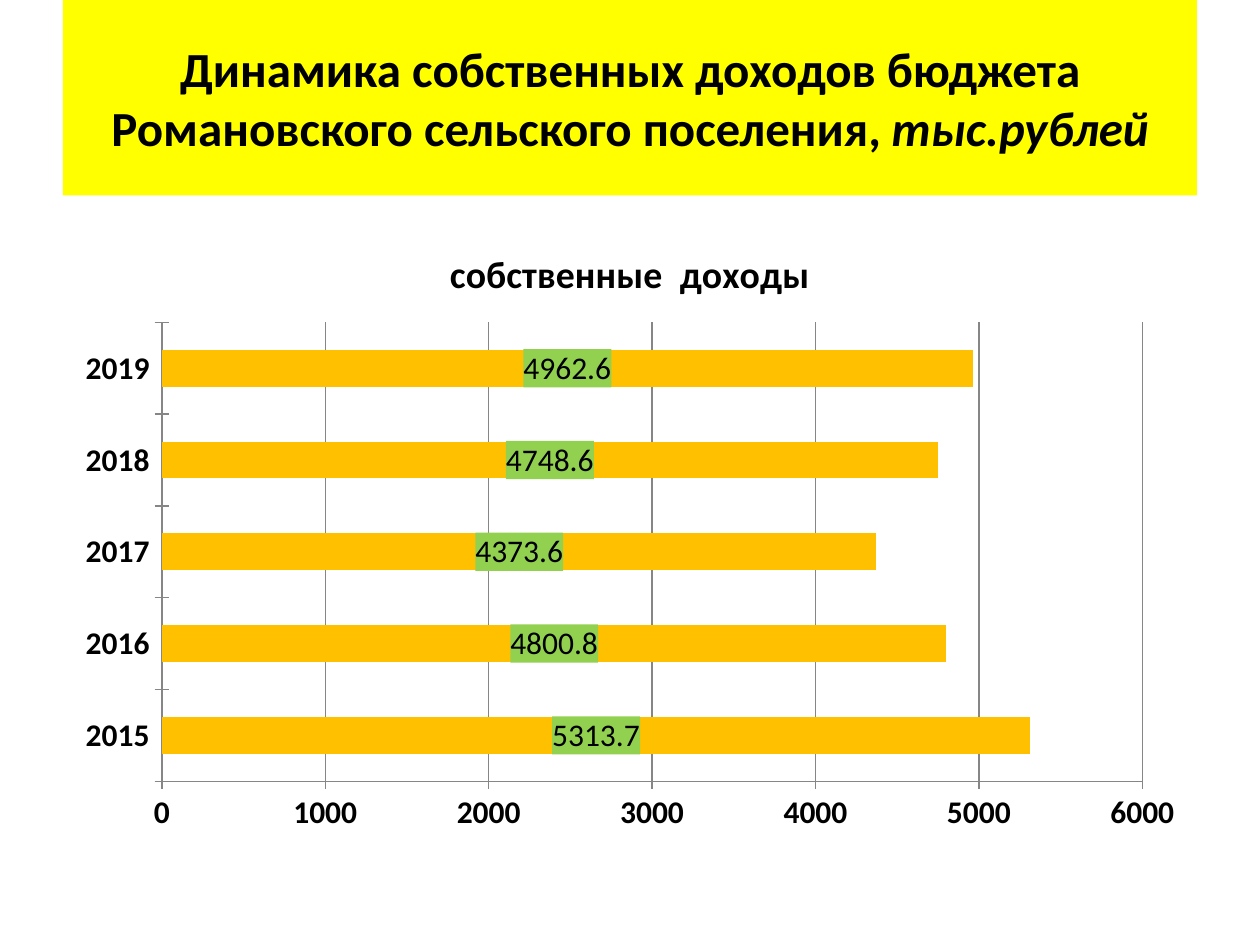
from pptx import Presentation
from pptx.chart.data import CategoryChartData as Data
from pptx.dml.color import RGBColor as Rgb
from pptx.enum.chart import XL_CHART_TYPE as Kind, XL_LABEL_POSITION as Pos
from pptx.enum.chart import XL_TICK_MARK as Tick
from pptx.enum.shapes import MSO_SHAPE as Shape
from pptx.enum.text import MSO_ANCHOR as Anchor, PP_ALIGN as Align
from pptx.oxml import parse_xml
from pptx.oxml.ns import nsdecls
from pptx.util import Cm, Pt

FACE = "Calibri"
HEAD = ("Динамика собственных доходов бюджета Романовского сельского поселения, ", "тыс.рублей")
NAME = "собственные  доходы"
YEARS = ["2015", "2016", "2017", "2018", "2019"]
SUMS = [5313.7, 4800.8, 4373.6, 4748.6, 4962.6]


def paint(part, hue):
    """Give a fill or line format a solid colour."""
    part.solid()
    part.fore_color.rgb = Rgb.from_string(hue)


def style(font, size, bold=True, slant=False):
    """Set the face, size, weight and colour of a font."""
    font.name, font.size = FACE, Pt(size)
    font.bold, font.italic = bold, slant
    font.color.rgb = Rgb.from_string("000000")


def add_head(slide):
    """Add the yellow heading band."""
    band = slide.shapes.add_shape(Shape.RECTANGLE, Cm(1.27), 0, Cm(22.86), Cm(3.94))
    band.shadow.inherit = False
    paint(band.fill, "FFFF00")
    band.line.fill.background()
    frame = band.text_frame
    frame.word_wrap = True
    frame.vertical_anchor = Anchor.MIDDLE
    para = frame.paragraphs[0]
    para.alignment = Align.CENTER
    for text, slant in zip(HEAD, (False, True)):
        run = para.add_run()
        run.text = text
        style(run.font, 28, slant=slant)


def set_axis(axis, grid):
    """Format one axis with crossing ticks and grey lines."""
    axis.major_tick_mark = Tick.CROSS if grid else Tick.OUTSIDE
    axis.minor_tick_mark = Tick.NONE
    axis.has_major_gridlines = grid
    style(axis.tick_labels.font, 18)
    lines = [axis.format.line]
    if grid:
        lines.append(axis.major_gridlines.format.line)
    for line in lines:
        paint(line.fill, "868686")
        line.width = Pt(0.75)


def set_labels(plot):
    """Show values on green boxes in the middle of the bars."""
    plot.has_data_labels = True
    labels = plot.data_labels
    labels.show_value = True
    labels.position = Pos.CENTER
    labels.number_format, labels.number_format_is_linked = "General", False
    style(labels.font, 18, bold=False)
    box = parse_xml(
        f'<c:spPr {nsdecls("c", "a")}><a:solidFill>'
        '<a:srgbClr val="92D050"/></a:solidFill></c:spPr>'
    )
    labels.font
    labels._element.find(".//{*}txPr").addprevious(box)


def add_bars(slide):
    """Add the bar chart of own income by year."""
    data = Data(number_format="General")
    data.categories = YEARS
    data.add_series(NAME, SUMS)
    spot = Cm(1.27), Cm(4.45), Cm(22.86), Cm(12.57)
    chart = slide.shapes.add_chart(Kind.BAR_STACKED, *spot, data).chart
    style(chart.font, 18, bold=False)
    chart.has_legend = False
    chart.has_title = True
    frame = chart.chart_title.text_frame
    frame.text = NAME
    style(frame.paragraphs[0].runs[0].font, 21.6)
    chart.chart_title.include_in_layout = False
    set_axis(chart.category_axis, False)
    set_axis(chart.value_axis, True)
    chart.category_axis.major_tick_mark = Tick.CROSS
    chart.value_axis.minimum_scale = 0
    chart.value_axis.maximum_scale = 6000
    chart.value_axis.major_unit = 1000
    plot = chart.plots[0]
    plot.gap_width, plot.overlap = 150, 100
    plot.vary_by_categories = False
    paint(plot.series[0].format.fill, "FFC000")
    set_labels(plot)


def main():
    """Build and save the slide."""
    deck = Presentation()
    deck.slide_width, deck.slide_height = Cm(25.4), Cm(19.05)
    slide = deck.slides.add_slide(deck.slide_layouts[6])
    add_head(slide)
    add_bars(slide)
    deck.save("out.pptx")


if __name__ == "__main__":
    main()
